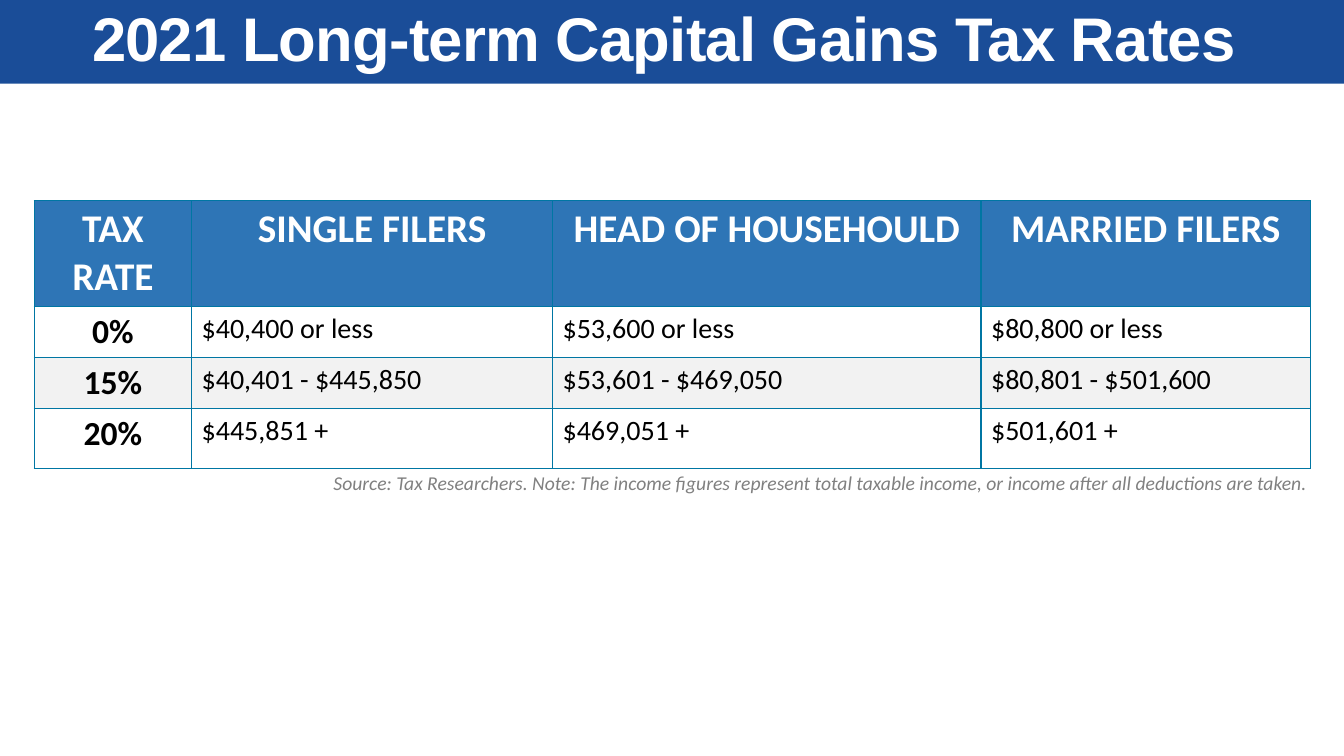
"""Build a slide with the 2021 long-term capital gains tax rates."""
from dataclasses import dataclass

from lxml import etree
from pptx import Presentation
from pptx.dml.color import RGBColor
from pptx.enum.shapes import MSO_SHAPE
from pptx.enum.text import MSO_ANCHOR, PP_ALIGN
from pptx.oxml.ns import qn
from pptx.util import Inches, Pt

RECTANGLE = MSO_SHAPE.RECTANGLE
MIDDLE = MSO_ANCHOR.MIDDLE
LEFT, CENTER, RIGHT = PP_ALIGN.LEFT, PP_ALIGN.CENTER, PP_ALIGN.RIGHT

TITLE = "2021 Long-term Capital Gains Tax Rates "
RATES = [
    ("TAX RATE", "SINGLE FILERS", "HEAD OF HOUSEHOULD", "MARRIED FILERS"),
    ("0%", "$40,400 or less", "$53,600 or less", "$80,800 or less"),
    ("15%", "$40,401 - $445,850", "$53,601 - $469,050", "$80,801 - $501,600"),
    ("20%", "$445,851 +", "$469,051 +", "$501,601 +"),
]
SOURCE_NOTE = (
    "Source: Tax Researchers. Note: The income figures represent total "
    "taxable income, or income after all deductions are taken."
)
PAGE_SIZE = (13.33, 7.5)
BANNER_HEIGHT = 0.83
TABLE_LEFT, TABLE_TOP = 0.34, 1.99
COLUMN_WIDTHS = (1.56, 3.58, 4.25, 3.27)
ROW_HEIGHTS = (1.03, 0.5, 0.5, 0.59)
NOTE_BOX = (2.16, 4.62, 10.91, 0.34)


@dataclass(frozen=True)
class Theme:
    title_font: str = "Arial"
    body_font: str = "Calibri"
    banner: str = "1A4D98"
    header: str = "2E75B6"
    band: str = "F2F2F2"
    white: str = "FFFFFF"
    black: str = "000000"
    grey: str = "808080"
    border: str = "0076A3"
    title_size: int = 44
    header_size: int = 28
    rate_size: int = 24
    income_size: int = 20
    note_size: int = 14


THEME = Theme()


def paint(target, color):
    target.fill.solid()
    target.fill.fore_color.rgb = RGBColor.from_string(color)


def write(frame, text, size, color, align, font=THEME.body_font, bold=False, italic=False):
    para = frame.paragraphs[0]
    para.alignment = align
    span = para.add_run()
    span.text = text
    span.font.name = font
    span.font.size = Pt(size)
    span.font.bold = bold
    span.font.italic = italic
    span.font.color.rgb = RGBColor.from_string(color)
    return para, span


def add_borders(cell):
    properties = cell._tc.get_or_add_tcPr()
    for index, side in enumerate(("a:lnL", "a:lnR", "a:lnT", "a:lnB")):
        line = etree.Element(qn(side), w=str(Pt(1)))
        fill = etree.SubElement(line, qn("a:solidFill"))
        etree.SubElement(fill, qn("a:srgbClr"), val=THEME.border)
        properties.insert(index, line)


def add_banner(page):
    banner = page.shapes.add_shape(
        RECTANGLE, 0, 0, Inches(PAGE_SIZE[0]), Inches(BANNER_HEIGHT)
    )
    banner.shadow.inherit = False
    paint(banner, THEME.banner)
    banner.line.fill.background()
    frame = banner.text_frame
    frame.word_wrap = True
    frame.vertical_anchor = MIDDLE
    para, span = write(
        frame, TITLE, THEME.title_size, THEME.white, CENTER, THEME.title_font, bold=True
    )
    para.line_spacing = 0.9
    span.font._element.set("spc", "-60")


def cell_style(row, column):
    if row == 0:
        return THEME.header, THEME.header_size, THEME.white, CENTER, True
    fill = THEME.white if row % 2 else THEME.band
    if column == 0:
        return fill, THEME.rate_size, THEME.black, CENTER, True
    return fill, THEME.income_size, THEME.black, LEFT, False


def add_rates(page):
    table = page.shapes.add_table(
        len(ROW_HEIGHTS), len(COLUMN_WIDTHS), Inches(TABLE_LEFT), Inches(TABLE_TOP),
        Inches(sum(COLUMN_WIDTHS)), Inches(sum(ROW_HEIGHTS)),
    ).table
    for column, width in zip(table.columns, COLUMN_WIDTHS):
        column.width = Inches(width)
    for row, height in zip(table.rows, ROW_HEIGHTS):
        row.height = Inches(height)
    for row, values in enumerate(RATES):
        for column, text in enumerate(values):
            cell = table.cell(row, column)
            fill, size, color, align, bold = cell_style(row, column)
            paint(cell, fill)
            add_borders(cell)
            write(cell.text_frame, text, size, color, align, bold=bold)


def add_source_note(page):
    box = page.shapes.add_textbox(*map(Inches, NOTE_BOX))
    box.text_frame.word_wrap = True
    write(box.text_frame, SOURCE_NOTE, THEME.note_size, THEME.grey, RIGHT, italic=True)


def main():
    deck = Presentation()
    deck.slide_width, deck.slide_height = map(Inches, PAGE_SIZE)
    page = deck.slides.add_slide(deck.slide_layouts[6])
    add_banner(page)
    add_rates(page)
    add_source_note(page)
    deck.save("out.pptx")


if __name__ == "__main__":
    main()
